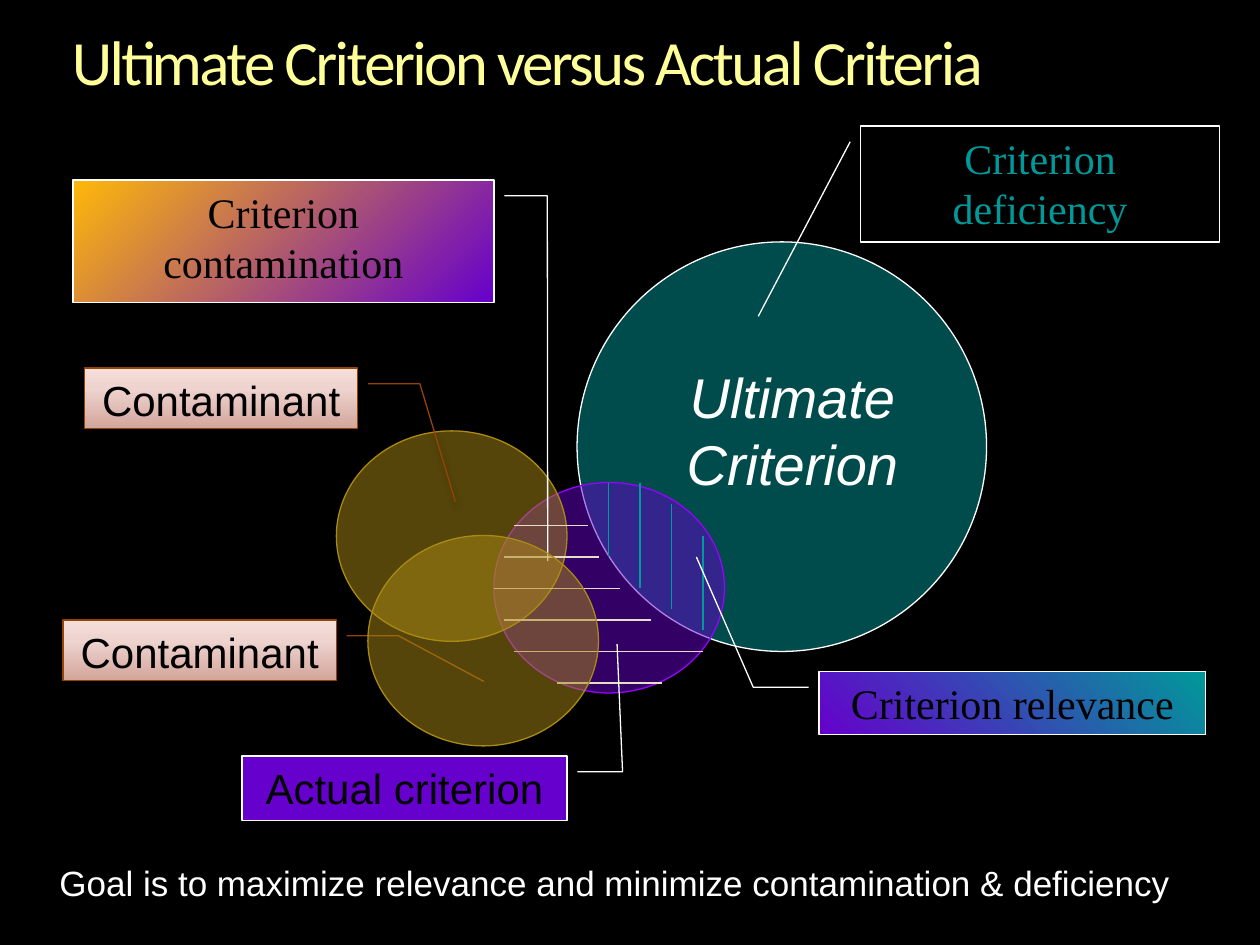
from dataclasses import dataclass

from lxml import etree
from pptx import Presentation
from pptx.dml.color import RGBColor
from pptx.enum import shapes, text
from pptx.oxml.ns import qn
from pptx.util import Inches, Pt


@dataclass(frozen=True)
class Theme:
    black: str = "000000"
    white: str = "FFFFFF"
    teal: str = "009999"
    purple: str = "6600CC"
    violet: str = "9900FF"
    ochre: str = "AA8A14"
    cream: str = "E7DEC9"
    rust: str = "964305"
    amber: str = "FEB80A"
    title_size: int = 36
    heading_size: int = 32
    label_size: int = 24
    goal_size: int = 20
    line_width: float = 0.75
    sans: str = "Arial"
    serif: str = "Times New Roman"
    title_font: str = "Calibri"


THEME = Theme()
PINK = ([(0, "D3A59B"), (65, "EED3CE"), (100, "F5DFDB")], 270)
RELEVANCE = ([(0, THEME.purple), (100, THEME.teal)], 315)
CONTAMINATION = ([(0, THEME.amber), (100, THEME.purple)], 45)
TITLE_COLOR = ([(0, "FFFFB9"), (36, "FFFF99"), (86, "F6AE1E")], 90)

TITLE = "Ultimate Criterion versus Actual Criteria"
HEADING = "Ultimate Criterion"
GOAL = "Goal is to maximize relevance and minimize contamination & deficiency"

ULTIMATE = ((4.58, 1.92, 3.25, 3.25), THEME.teal, THEME.white)
SMALL_SIZE = (1.83, 1.67)
ACTUAL = ((3.92, 3.83, *SMALL_SIZE), THEME.purple, THEME.violet)
UPPER_CONTAMINANT = ((2.67, 3.42, *SMALL_SIZE), THEME.ochre, THEME.ochre)
LOWER_CONTAMINANT = ((2.92, 4.25, *SMALL_SIZE), THEME.ochre, THEME.ochre)

HATCH_GAP = 0.25
RELEVANCE_LEFT = 4.83
RELEVANCE_SPANS = [(3.83, 4.42), (3.83, 4.67), (4, 4.83), (4.25, 5)]
CONTAMINATION_TOP = 4.17
CONTAMINATION_SPANS = [(4.08, 4.67), (4, 4.75), (3.92, 4.92),
                       (4, 5.17), (4.08, 5.58), (4.42, 5.25)]

CALLOUTS = [
    ("Actual criterion", (1.92, 6, 2.58, 0.51), THEME.purple, THEME.white,
     THEME.sans, THEME.black, (0.245, 1.032, 0.245, 1.171, -1.744, 1.154)),
    ("Criterion relevance", (6.5, 5.33, 3.07, 0.5), RELEVANCE, THEME.white,
     THEME.serif, THEME.black, (0.25, -0.027, 0.25, -0.17, -1.819, -0.317)),
    ("Contaminant", (0.67, 2.92, 2.17, 0.48), PINK, THEME.rust,
     THEME.sans, THEME.black, (0.262, 1.038, 0.262, 1.227, 2.214, 1.357)),
    ("Criterion contamination", (0.58, 1.43, 3.34, 0.97), CONTAMINATION, THEME.white,
     THEME.serif, THEME.black, (0.129, 1.025, 0.129, 1.127, 3.118, 1.128)),
    ("Criterion deficiency", (6.83, 1, 2.85, 0.92), THEME.black, THEME.white,
     THEME.serif, THEME.teal, (0.136, -0.029, 1.642, -0.285)),
    ("Contaminant", (0.5, 4.92, 2.17, 0.48), PINK, THEME.rust,
     THEME.sans, THEME.black, (0.262, 1.038, 0.262, 1.227, 1.017, 1.539)),
]


def rgb(color):
    return RGBColor.from_string(color)


def add_color(parent, color, alpha=None):
    node = etree.SubElement(parent, qn("a:srgbClr"), val=color)
    if alpha:
        etree.SubElement(node, qn("a:alpha"), val=str(alpha * 1000))


def paint(fill, holder, color):
    if isinstance(color, str):
        fill.solid()
        fill.fore_color.rgb = rgb(color)
        return
    stops, angle = color
    fill.gradient()
    fill.gradient_angle = 360 - angle
    stop_list = holder.find(qn("a:gradFill")).find(qn("a:gsLst"))
    for stop in list(stop_list):
        stop_list.remove(stop)
    for position, stop_color in stops:
        add_color(etree.SubElement(stop_list, qn("a:gs"), pos=str(position * 1000)), stop_color)


def outline(line, color):
    line.color.rgb = rgb(color)
    line.width = Pt(THEME.line_width)


def write(box, words, font, size, color, align=text.PP_ALIGN.CENTER):
    frame = box.text_frame
    frame.word_wrap = True
    frame.vertical_anchor = text.MSO_ANCHOR.TOP
    para = frame.paragraphs[0]
    para.alignment = align
    span = para.add_run()
    span.text = words
    span.font.name = font
    span.font.size = Pt(size)
    paint(span.font.fill, span.font._element, color)
    return para, span


def add_text(page, place, *style, **options):
    box = page.shapes.add_textbox(*map(Inches, place))
    return box, *write(box, *style, **options)


def add_shape(page, kind, place, color, edge):
    shape = page.shapes.add_shape(kind, *map(Inches, place))
    shape.shadow.inherit = False
    paint(shape.fill, shape._element.spPr, color)
    outline(shape.line, edge)
    return shape


def add_circle(page, place, color, edge):
    circle = add_shape(page, shapes.MSO_SHAPE.OVAL, place, color, edge)
    tint = circle._element.spPr.find(qn("a:solidFill"))[0]
    etree.SubElement(tint, qn("a:alpha"), val="50000")


def add_line(page, start, end, color):
    line = page.shapes.add_connector(
        shapes.MSO_CONNECTOR.STRAIGHT, *map(Inches, (*start, *end)))
    outline(line.line, color)
    etree.SubElement(line._element.spPr, qn("a:effectLst"))


def add_callout(page, words, place, color, edge, font, ink, leader):
    kind = shapes.MSO_SHAPE.LINE_CALLOUT_2 if len(leader) == 6 else shapes.MSO_SHAPE.LINE_CALLOUT_1
    callout = add_shape(page, kind, place, color, edge)
    for index, value in enumerate(leader):
        callout.adjustments[index] = value
    if color is PINK:
        effects = callout._element.spPr.find(qn("a:effectLst"))
        shadow = etree.SubElement(effects, qn("a:outerShdw"), blurRad=str(Pt(4)),
                                  dist=str(Pt(3)), dir="5400000", rotWithShape="0")
        add_color(shadow, THEME.black, 35)
    write(callout, words, font, THEME.label_size, ink)


def main():
    deck = Presentation()
    deck.slide_width, deck.slide_height = Inches(10), Inches(7.5)
    page = deck.slides.add_slide(deck.slide_layouts[6])
    page.background.fill.solid()
    page.background.fill.fore_color.rgb = rgb(THEME.black)

    box, para, span = add_text(page, (0.57, 0.25, 9, 0.67), TITLE, THEME.title_font,
                               THEME.title_size, TITLE_COLOR, align=text.PP_ALIGN.LEFT)
    frame = box.text_frame
    frame.margin_left = frame.margin_right = frame.margin_top = frame.margin_bottom = 0
    para.line_spacing = 0.9
    span.font._element.set("spc", "-150")

    add_circle(page, *ULTIMATE)
    box, para, span = add_text(page, (5.25, 2.83, 2.08, 1.17), HEADING, THEME.sans,
                               THEME.heading_size, THEME.white)
    span.font.italic = True
    add_circle(page, *ACTUAL)
    add_circle(page, *UPPER_CONTAMINANT)

    for index, (top, bottom) in enumerate(RELEVANCE_SPANS):
        x = RELEVANCE_LEFT + index * HATCH_GAP
        add_line(page, (x, top), (x, bottom), THEME.teal)
    for index, (left, right) in enumerate(CONTAMINATION_SPANS):
        y = CONTAMINATION_TOP + index * HATCH_GAP
        add_line(page, (left, y), (right, y), THEME.cream)

    for callout in CALLOUTS:
        add_callout(page, *callout)
    add_circle(page, *LOWER_CONTAMINANT)
    add_text(page, (0.12, 6.79, 9.52, 0.5), GOAL, THEME.sans, THEME.goal_size, THEME.white)
    deck.save("out.pptx")


if __name__ == "__main__":
    main()
